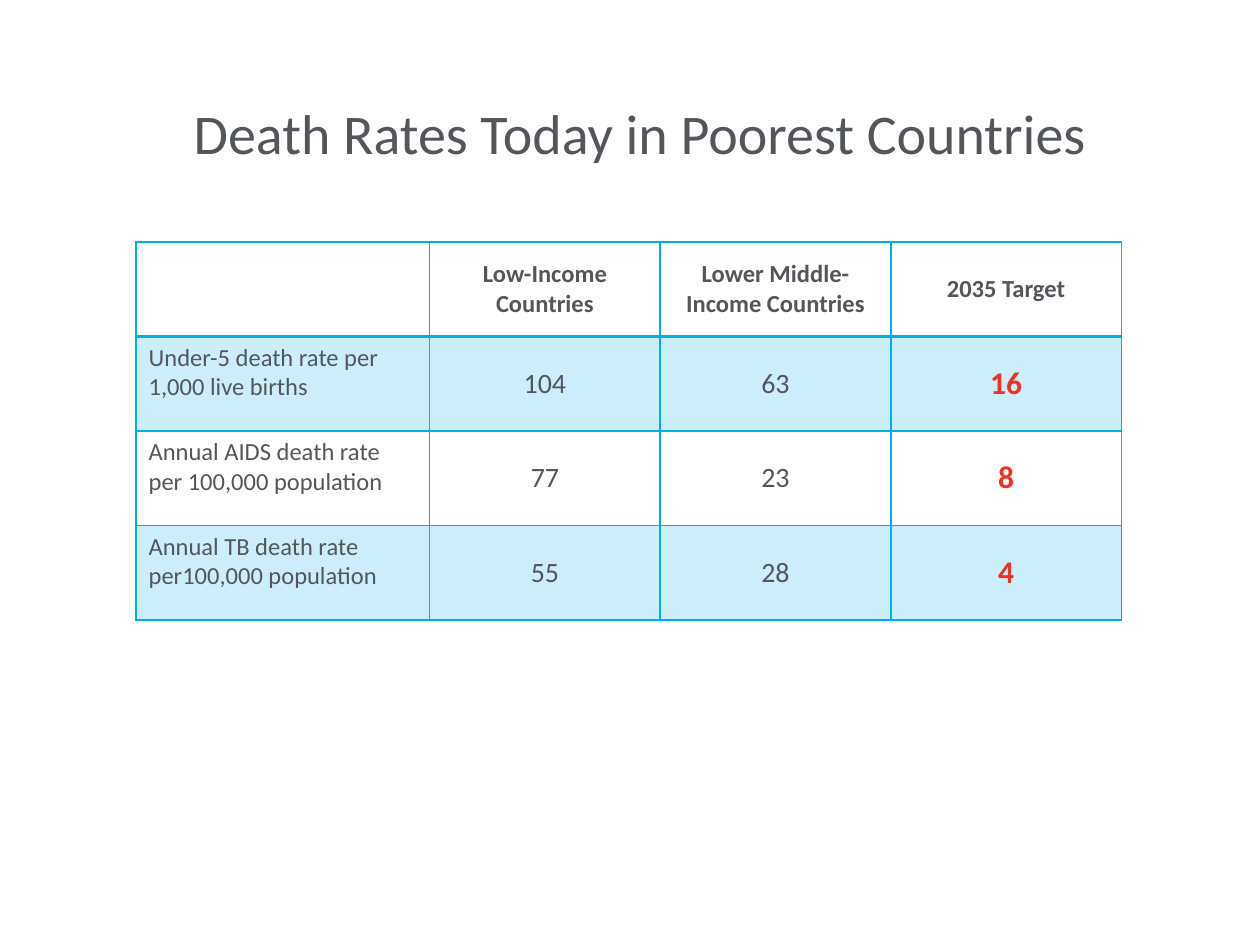
from dataclasses import dataclass

from lxml import etree
from pptx import Presentation
from pptx import util as u
from pptx.dml.color import RGBColor
from pptx.enum import text
from pptx.oxml import ns


@dataclass(frozen=True)
class Theme:
    font: str = "Calibri"
    ink: str = "53565A"
    accent: str = "00AEEF"
    target: str = "EE3124"
    band_opacity: int = 20
    title_size: int = 32
    label_size: int = 14
    value_size: int = 16
    target_size: int = 18
    rule: int = 1
    header_rule: int = 2


def write(frame, content, *, font, size, color, bold=False, align=text.PP_ALIGN.CENTER):
    para = frame.paragraphs[0]
    para.alignment = align
    span = para.add_run()
    span.text = content
    span.font.name = font
    span.font.size = u.Pt(size)
    span.font.bold = bold
    span.font.color.rgb = RGBColor.from_string(color)


class SlideBuilder:
    """Draws styled elements on the current slide."""

    def __init__(self, page, theme):
        self.page = page
        self.theme = theme

    def title(self, content, left, top, width, height):
        box = self.page.shapes.add_textbox(*map(u.Inches, (left, top, width, height)))
        frame = box.text_frame
        frame.word_wrap = True
        frame.vertical_anchor = text.MSO_ANCHOR.MIDDLE
        write(frame, content, font=self.theme.font, size=self.theme.title_size,
              color=self.theme.ink)

    def table(self, rows, left, top, widths, row_height):
        size = (left, top, sum(widths), row_height * len(rows))
        table = self.page.shapes.add_table(
            len(rows), len(widths), *map(u.Inches, size)).table
        table.first_row = table.horz_banding = False
        for column, width in zip(table.columns, widths):
            column.width = u.Inches(width)
        for row_index, row in enumerate(rows):
            table.rows[row_index].height = u.Inches(row_height)
            for column_index, content in enumerate(row):
                cell = table.cell(row_index, column_index)
                self.borders(cell, row_index)
                self.fill(cell, banded=row_index % 2 == 1)
                if content:
                    self.cell_text(cell, content, row_index, column_index, len(row) - 1)

    def cell_text(self, cell, content, row_index, column_index, last_column):
        theme = self.theme
        style = dict(font=theme.font, size=theme.value_size, color=theme.ink)
        if row_index == 0:
            style.update(size=theme.label_size, bold=True)
        elif column_index == 0:
            style.update(size=theme.label_size, align=text.PP_ALIGN.LEFT)
        elif column_index == last_column:
            style.update(size=theme.target_size, color=theme.target, bold=True)
        is_label = row_index > 0 and column_index == 0
        cell.vertical_anchor = text.MSO_ANCHOR.TOP if is_label else text.MSO_ANCHOR.MIDDLE
        write(cell.text_frame, content, **style)

    def borders(self, cell, row_index):
        heavy_side = {0: "lnB", 1: "lnT"}.get(row_index)
        properties = cell._tc.get_or_add_tcPr()
        for side in ("lnL", "lnR", "lnT", "lnB"):
            weight = self.theme.header_rule if side == heavy_side else self.theme.rule
            line = etree.SubElement(properties, ns.qn(f"a:{side}"), w=str(u.Pt(weight)))
            paint = etree.SubElement(line, ns.qn("a:solidFill"))
            etree.SubElement(paint, ns.qn("a:srgbClr"), val=self.theme.accent)

    def fill(self, cell, banded):
        if not banded:
            cell.fill.background()
            return
        cell.fill.solid()
        cell.fill.fore_color.rgb = RGBColor.from_string(self.theme.accent)
        color = cell._tc.tcPr.find(f"{ns.qn('a:solidFill')}/{ns.qn('a:srgbClr')}")
        etree.SubElement(color, ns.qn("a:alpha"), val=str(self.theme.band_opacity * 1000))


def main():
    deck = Presentation()
    deck.slide_width, deck.slide_height = u.Inches(10), u.Inches(7.5)
    page = deck.slides.add_slide(deck.slide_layouts[6])
    builder = SlideBuilder(page, Theme())
    builder.title("Death Rates Today in Poorest Countries", 0.58, 0.42, 9, 1.25)
    death_rates = [
        ("", "Low-Income Countries", "Lower Middle-Income Countries", "2035 Target"),
        ("Under-5 death rate per 1,000 live births", "104", "63", "16"),
        ("Annual AIDS death rate per 100,000 population", "77", "23", "8"),
        ("Annual TB death rate per100,000 population", "55", "28", "4"),
    ]
    builder.table(death_rates, 1.08, 1.92, [2.33] + [1.83] * 3, 0.75)
    deck.save("out.pptx")


if __name__ == "__main__":
    main()
